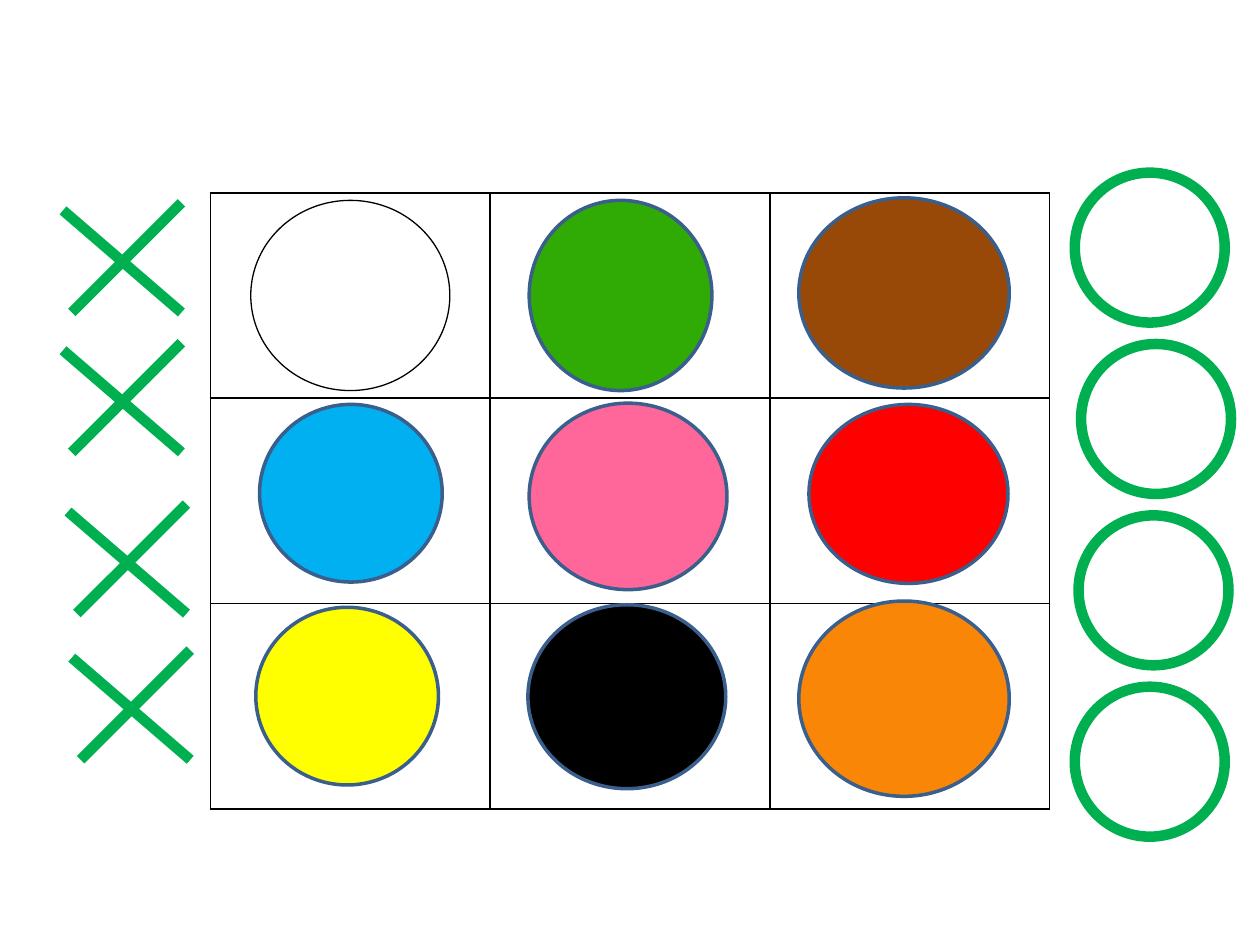
"""Build a slide with a 3 by 3 grid of coloured discs, crosses and rings."""
from lxml.etree import SubElement
from pptx import Presentation
from pptx.dml.color import RGBColor
from pptx.enum.shapes import MSO_CONNECTOR as CONN, MSO_SHAPE as SHAPE
from pptx.oxml.ns import qn
from pptx.util import Inches, Pt

WHITE = RGBColor(0xFF, 0xFF, 0xFF)
BLACK = RGBColor(0x00, 0x00, 0x00)
GREEN = RGBColor(0x30, 0xAB, 0x05)
BROWN = RGBColor(0x98, 0x48, 0x07)
BLUE = RGBColor(0x00, 0xB0, 0xF0)
PINK = RGBColor(0xFF, 0x66, 0x99)
RED = RGBColor(0xFF, 0x00, 0x00)
YELLOW = RGBColor(0xFF, 0xFF, 0x00)
ORANGE = RGBColor(0xF9, 0x86, 0x07)
OUTLINE = RGBColor(0x3A, 0x5F, 0x8C)
MARK = RGBColor(0x00, 0xB0, 0x50)

DISCS = [
    (4.2, 1.59, 1.45, 1.51, GREEN, OUTLINE, 2),
    (1.99, 1.59, 1.58, 1.51, WHITE, BLACK, 0.75),
    (6.34, 1.57, 1.67, 1.51, BROWN, OUTLINE, 2),
    (6.34, 4.77, 1.67, 1.55, ORANGE, OUTLINE, 2),
    (4.2, 3.2, 1.57, 1.48, PINK, OUTLINE, 2),
    (6.42, 3.21, 1.58, 1.42, RED, OUTLINE, 2),
    (4.19, 4.8, 1.57, 1.46, BLACK, OUTLINE, 2),
    (2.06, 3.21, 1.45, 1.41, BLUE, OUTLINE, 2),
    (2.03, 4.82, 1.45, 1.41, YELLOW, OUTLINE, 2),
]
CROSSES = [(0.5, 1.61), (0.5, 2.72), (0.54, 4), (0.57, 5.16)]
RING_LEFTS = [8.53, 8.58, 8.56, 8.53]
RING_TOP, RING_STEP, RING_SIZE = 1.37, 1.36, 1.19


class Board:
    """Hold the mark style and the current slide, and draw its elements."""

    def __init__(self, s, mark, weight):
        self.s = s
        self.mark = mark
        self.weight = weight

    def grid(self, x, y, size, col, row):
        frame = self.s.shapes.add_table(
            size, size, Inches(x), Inches(y), Inches(col * size), Inches(row * size))
        table = frame.table
        table.first_row = table.horz_banding = False
        for c in table.columns:
            c.width = Inches(col)
        for r in table.rows:
            r.height = Inches(row)
        for cell in table.iter_cells():
            tc_pr = cell._tc.get_or_add_tcPr()
            for side in ("a:lnL", "a:lnR", "a:lnT", "a:lnB"):
                ln = SubElement(tc_pr, qn(side), w=str(Pt(1)))
                fill = SubElement(ln, qn("a:solidFill"))
                SubElement(fill, qn("a:srgbClr"), val=str(BLACK))
            cell.fill.background()

    def ellipse(self, x, y, w, h, fill, line, weight):
        sp = self.s.shapes.add_shape(
            SHAPE.OVAL, Inches(x), Inches(y), Inches(w), Inches(h))
        sp.shadow.inherit = False
        if fill is None:
            sp.fill.background()
        else:
            sp.fill.solid()
            sp.fill.fore_color.rgb = fill
        sp.line.color.rgb = line
        sp.line.width = Pt(weight)

    def ring(self, x, y, size):
        self.ellipse(x, y, size, size, None, self.mark, self.weight)

    def cross(self, x, y):
        group = self.s.shapes.add_group_shape()
        strokes = [(0.07, 0.87, 0.94, 0), (0, 0.06, 0.94, 0.87)]
        for x1, y1, x2, y2 in strokes:
            cx = group.shapes.add_connector(
                CONN.STRAIGHT, Inches(x + x1), Inches(y + y1),
                Inches(x + x2), Inches(y + y2))
            cx.line.color.rgb = self.mark
            cx.line.width = Pt(self.weight)
            SubElement(cx._element.spPr, qn("a:effectLst"))


def main():
    prs = Presentation()
    prs.slide_width, prs.slide_height = Inches(10), Inches(7.5)
    s = prs.slides.add_slide(prs.slide_layouts[6])
    board = Board(s, MARK, 6)
    board.grid(1.67, 1.53, 3, 2.22, 1.63)
    for disc in DISCS:
        board.ellipse(*disc)
    for x, y in CROSSES:
        board.cross(x, y)
    for i, x in enumerate(RING_LEFTS):
        board.ring(x, RING_TOP + i * RING_STEP, RING_SIZE)
    prs.save("out.pptx")


if __name__ == "__main__":
    main()
